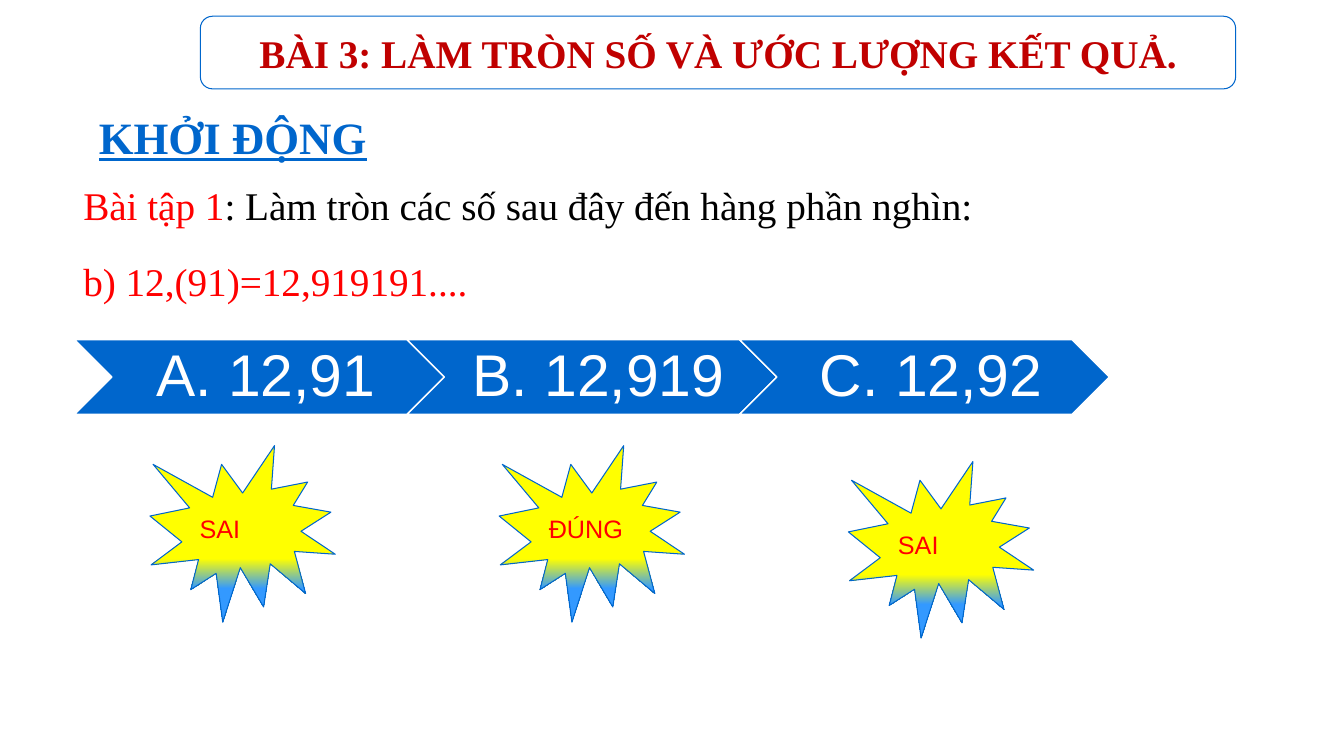
from dataclasses import dataclass

from pptx import Presentation
from pptx.dml.color import RGBColor
from pptx.enum.shapes import MSO_SHAPE
from pptx.enum.text import MSO_ANCHOR, PP_ALIGN
from pptx.util import Cm, Pt


@dataclass(frozen=True)
class Theme:
    blue: str = "0066CC"
    sky: str = "3399FF"
    yellow: str = "FFFF00"
    red: str = "FF0000"
    dark_red: str = "C00000"
    black: str = "000000"
    white: str = "FFFFFF"
    serif: str = "Times New Roman"
    sans: str = "Arial"
    heading: int = 32
    body: int = 28
    option: int = 42
    verdict: int = 18


class SlideBuilder:
    def __init__(self, slide, theme):
        self.s = slide
        self.theme = theme

    def fill_text(self, tf, runs, frame=None, para=None):
        """Fill a text frame with (text, colour, font format) runs."""
        for key, value in (frame or {}).items():
            setattr(tf, key, value)
        p = tf.paragraphs[0]
        for key, value in (para or {}).items():
            setattr(p, key, value)
        for text, color, fmt in runs:
            r = p.add_run()
            r.text = text
            r.font.color.rgb = RGBColor.from_string(color)
            for key, value in fmt.items():
                setattr(r.font, key, value)

    def shape(self, kind, box, line, weight):
        sp = self.s.shapes.add_shape(kind, *map(Cm, box))
        sp.shadow.inherit = False
        sp.line.color.rgb = RGBColor.from_string(line)
        sp.line.width = Pt(weight)
        return sp

    def text(self, box, runs):
        sp = self.s.shapes.add_textbox(*map(Cm, box))
        self.fill_text(sp.text_frame, runs, {"word_wrap": True})

    def title(self, box, text):
        t = self.theme
        sp = self.shape(MSO_SHAPE.FLOWCHART_ALTERNATE_PROCESS, box, t.blue, 0.75)
        sp.fill.solid()
        sp.fill.fore_color.rgb = RGBColor.from_string(t.white)
        fmt = {"name": t.serif, "size": Pt(t.body), "bold": True}
        self.fill_text(sp.text_frame, [(text, t.dark_red, fmt)],
                       {"word_wrap": False, "vertical_anchor": MSO_ANCHOR.MIDDLE},
                       {"alignment": PP_ALIGN.CENTER})

    def option(self, box, text):
        t = self.theme
        sp = self.shape(MSO_SHAPE.CHEVRON, box, t.white, 1)
        sp.fill.solid()
        sp.fill.fore_color.rgb = RGBColor.from_string(t.blue)
        frame = {"word_wrap": True, "vertical_anchor": MSO_ANCHOR.MIDDLE,
                 "margin_left": Cm(0.48), "margin_right": Cm(0.15),
                 "margin_top": Cm(0.15), "margin_bottom": Cm(0.15)}
        fmt = {"name": t.sans, "size": Pt(t.option)}
        self.fill_text(sp.text_frame, [(text, t.white, fmt)], frame,
                       {"alignment": PP_ALIGN.CENTER, "line_spacing": 0.9})

    def verdict(self, box, text):
        t = self.theme
        sp = self.shape(MSO_SHAPE.EXPLOSION1, box, t.blue, 0.75)
        sp.fill.gradient()
        sp.fill.gradient_angle = 270
        stops = ((0.64, t.yellow), (0.81, t.sky))
        for stop, (position, color) in zip(sp.fill.gradient_stops, stops):
            stop.position = position
            stop.color.rgb = RGBColor.from_string(color)
        fmt = {"name": t.sans, "size": Pt(t.verdict)}
        self.fill_text(sp.text_frame, [(text, t.red, fmt)],
                       {"word_wrap": False, "vertical_anchor": MSO_ANCHOR.MIDDLE},
                       {"alignment": PP_ALIGN.LEFT})


def main():
    prs = Presentation()
    prs.slide_width, prs.slide_height = Cm(33.87), Cm(19.05)
    t = Theme()
    b = SlideBuilder(prs.slides.add_slide(prs.slide_layouts[6]), t)

    # Heading and lesson title
    b.text((2.24, 2.64, 18.92, 1.8), [
        ("KHỞI ĐỘNG", t.blue, {"name": t.serif, "size": Pt(t.heading),
                               "bold": True, "underline": True})])
    b.title((5.05, 0.41, 26.09, 1.83), "BÀI 3: LÀM TRÒN SỐ VÀ ƯỚC LƯỢNG KẾT QUẢ.")

    # Exercise
    body = {"name": t.serif, "size": Pt(t.body)}
    b.text((1.85, 4.45, 26.09, 1.88), [
        ("Bài tập 1", t.red, body),
        (": Làm tròn các số sau đây đến hàng phần nghìn:", t.black, body)])
    b.text((1.85, 6.35, 26.09, 1.88), [("b) 12,(91)=12,919191....", t.red, body)])

    # Answer options
    for i, answer in enumerate(("A. 12,91", "B. 12,919", "C. 12,92")):
        b.option((1.88 + 8.38 * i, 8.56, 9.32, 1.88), answer)

    # Verdict under each option
    for i, (verdict, top) in enumerate((("SAI", 11.23), ("ĐÚNG", 11.23), ("SAI", 11.63))):
        b.verdict((3.78 + 8.8 * i, top, 4.67, 4.45), verdict)

    prs.save("out.pptx")


if __name__ == "__main__":
    main()
